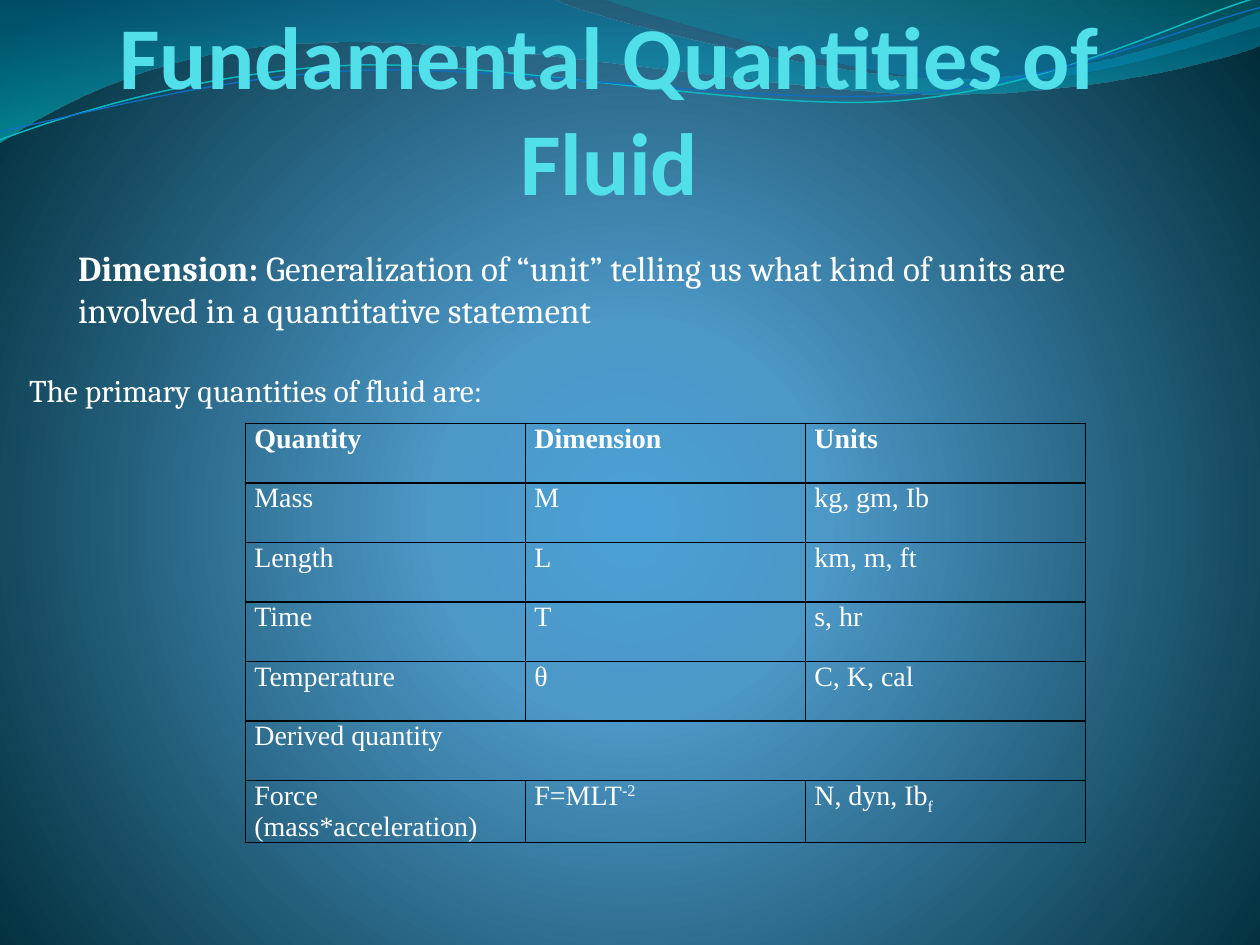
from lxml.etree import SubElement
from pptx import Presentation
from pptx.dml.color import RGBColor
from pptx.enum.text import MSO_ANCHOR, MSO_AUTO_SIZE, PP_ALIGN
from pptx.oxml import parse_xml
from pptx.oxml.ns import nsdecls, qn
from pptx.util import Pt

COLORS = {
    "white": "FFFFFF", "title": "51E0EA", "border": "000000",
    "glow": "4AA0D6", "mid": "4C98C7", "edge": "002C38",
    "wave_blue": "0074A1", "wave_cyan": "00C6CF",
    "crest_teal": "00A1A9", "crest_blue": "008BBF",
    "line_cyan": "0AB8BF", "line_blue": "0F6FC6",
}

# Outlines in points: a start, then lines (x, y) and curves (two controls, end)
WAVE = [(0, 0), (316.8, 0),
        (342.7, 12.2, 478.1, 45.4, 545.8, 45.4),
        (614.2, 45.4, 689.8, 18.7, 720, 6.5), (720, 25.9),
        (707.8, 31.7, 626.4, 54.7, 537.1, 54),
        (447.8, 54, 275, 20.2, 185, 24.5),
        (92.9, 25.9, 33.1, 59.8, 0, 81.4)]
CREST = [(344.9, 0),
         (366.5, 7.9, 491, 44.6, 553.7, 46.8),
         (616.3, 49.7, 691.9, 23, 720, 15.1), (720, 0)]
CYAN_LINE = [(0, 79.9),
             (34.6, 67, 113.8, 41, 199.4, 37.4),
             (284.4, 33.8, 427, 64.1, 513.4, 57.6),
             (599.8, 51.1, 675.4, 10.8, 718.6, -1.4)]
BLUE_LINE = [(0, 74.9),
             (33.8, 69.1, 118.1, 43.9, 203.8, 40.3),
             (290.2, 36.7, 429.8, 60.5, 516.2, 54),
             (601.9, 48.2, 677.5, 15.1, 720, 4.3)]

# Each cell is a list of (text, baseline in percent) runs or plain text
ROWS = [
    ["Quantity", "Dimension", "Units"],
    ["Mass", "M", "kg, gm, Ib"],
    ["Length", "L", "km, m, ft"],
    ["Time", "T", "s, hr"],
    ["Temperature", "θ", "C, K, cal"],
    ["Derived quantity"],
    ["Force (mass*acceleration)", [("F=MLT", 0), ("-2", 30)],
     [("N, dyn, Ib", 0), ("f", -25)]],
]


def rgb(name):
    return RGBColor.from_string(COLORS[name])


def gradient(stops, shade):
    """Gradient fill from (position, colour, opacity) in percent."""
    gs = "".join(
        f'<a:gs pos="{pos * 1000}"><a:srgbClr val="{COLORS[name]}">'
        f'<a:alpha val="{alpha * 1000}"/></a:srgbClr></a:gs>'
        for pos, name, alpha in stops)
    return parse_xml(f'<a:gradFill {nsdecls("a")} rotWithShape="1">'
                     f'<a:gsLst>{gs}</a:gsLst>{shade}</a:gradFill>')


def set_gradient(fill, root, stops, shade):
    fill.gradient()
    old = next(root.iter(qn("a:gradFill")))
    old.getparent().replace(old, gradient(stops, shade))


def add_run(p, text, font, size, color="white", bold=False, baseline=0):
    r = p.add_run()
    r.text = text
    r.font.name, r.font.size, r.font.bold = font, Pt(size), bold
    r.font.color.rgb = rgb(color)
    if baseline:
        r.font._element.set("baseline", str(baseline * 1000))


def set_frame(tf, top=3.6):
    tf.word_wrap = True
    tf.auto_size = MSO_AUTO_SIZE.NONE
    tf.margin_left, tf.margin_right = 0, Pt(1.4)
    tf.margin_top = tf.margin_bottom = Pt(top)


def place(sp, box):
    sp.left, sp.top, sp.width, sp.height = map(Pt, box)


def add_curve(slide, outline, closed):
    points = [(Pt(seg[i]), Pt(seg[i + 1]))
              for seg in outline for i in range(0, len(seg), 2)]
    builder = slide.shapes.build_freeform(*points[0])
    builder.add_line_segments(points[1:], close=closed)
    sp = builder.convert_to_shape()
    sp.shadow.inherit = False
    # Join each three points of a curve into one Bezier segment
    steps = iter(list(sp._element.iter(qn("a:lnTo"))))
    for seg in outline[1:]:
        step = next(steps)
        if len(seg) == 6:
            step.tag = qn("a:cubicBezTo")
            for _ in range(2):
                extra = next(steps)
                step.append(extra[0])
                extra.getparent().remove(extra)
    return sp


def add_backdrop(slide):
    set_gradient(slide.background.fill, slide.element,
                 [(0, "glow", 100), (25, "mid", 100), (100, "edge", 100)],
                 '<a:path path="circle"><a:fillToRect l="10000" t="110000"'
                 ' r="10000" b="100000"/></a:path>')
    for outline, stops in (
            (WAVE, [(0, "wave_blue", 45), (100, "wave_cyan", 55)]),
            (CREST, [(0, "crest_teal", 30), (80, "crest_blue", 45)])):
        sp = add_curve(slide, outline, True)
        set_gradient(sp.fill, sp._element, stops, '<a:lin ang="5400000"/>')
        sp.line.fill.background()
    for outline, color, width in ((CYAN_LINE, "line_cyan", 0.85),
                                  (BLUE_LINE, "line_blue", 0.75)):
        sp = add_curve(slide, outline, False)
        sp.fill.background()
        sp.line.color.rgb = rgb(color)
        sp.line.width = Pt(width)


def add_title(slide, box):
    sp = slide.shapes.title
    place(sp, box)
    slide.shapes._spTree.append(sp._element)  # in front of the waves
    tf = sp.text_frame
    set_frame(tf, 0)
    tf.vertical_anchor = MSO_ANCHOR.BOTTOM
    p = tf.paragraphs[0]
    p.alignment = PP_ALIGN.CENTER
    add_run(p, "Fundamental Quantities of Fluid", "Calibri", 50.4, "title", True)


def add_text(slide, box, size, runs):
    tf = slide.shapes.add_textbox(*map(Pt, box)).text_frame
    set_frame(tf)
    for text, bold in runs:
        add_run(tf.paragraphs[0], text, "Cambria", size, bold=bold)


def set_borders(cell):
    tc_pr = cell._tc.get_or_add_tcPr()
    for i, side in enumerate(("lnL", "lnR", "lnT", "lnB")):
        ln = SubElement(tc_pr, qn(f"a:{side}"), w=str(Pt(1)))
        fill = SubElement(ln, qn("a:solidFill"))
        SubElement(fill, qn("a:srgbClr"), val=COLORS["border"])
        tc_pr.insert(i, ln)


def add_quantities(slide, box):
    table = slide.shapes.add_table(len(ROWS), 3, *map(Pt, box)).table
    table.first_row = table.horz_banding = False
    for row in table.rows:
        row.height = Pt(34)
    for cell in table.iter_cells():
        cell.margin_left = cell.margin_right = Pt(5)
        cell.margin_top = cell.margin_bottom = 0
        cell.fill.background()
        set_borders(cell)
    for i, values in enumerate(ROWS):
        if len(values) == 1:
            table.cell(i, 0).merge(table.cell(i, 2))
        for j, value in enumerate(values):
            runs = [(value, 0)] if isinstance(value, str) else value
            p = table.cell(i, j).text_frame.paragraphs[0]
            for text, baseline in runs:
                add_run(p, text, "Times New Roman", 16,
                        bold=i == 0, baseline=baseline)


def main():
    prs = Presentation()
    prs.slide_width, prs.slide_height = Pt(720), Pt(540)
    slide = prs.slides.add_slide(prs.slide_layouts[5])
    add_backdrop(slide)
    add_title(slide, (39.6, 0, 618.5, 122))
    # Definition and lead-in to the table
    add_text(slide, (44.6, 137.5, 618.5, 65), 20, [
        ("Dimension: ", True),
        ("Generalization of “unit” telling us what kind of units are "
         "involved in a quantitative statement", False)])
    add_text(slide, (16.6, 208.5, 648, 32), 18,
             [("The primary quantities of fluid are:", False)])
    add_quantities(slide, (140.4, 242, 480, 238))
    prs.save("out.pptx")


if __name__ == "__main__":
    main()
